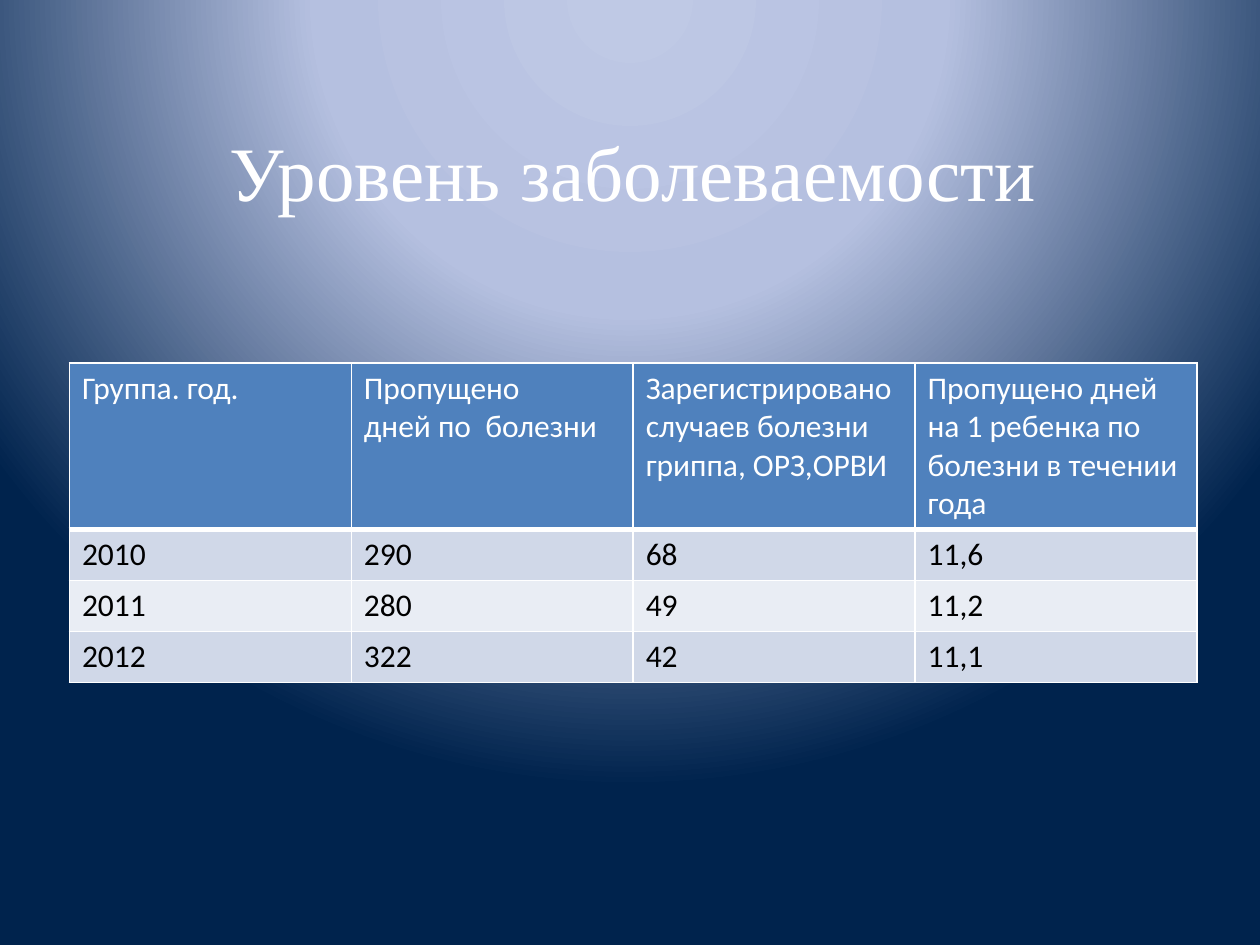
from dataclasses import dataclass

from lxml import etree
from pptx import Presentation
from pptx.dml.color import RGBColor
from pptx.enum import text
from pptx.oxml import ns
from pptx.util import Cm, Pt

TITLE = "Уровень заболеваемости"
HEADER = [
    ["Группа. год."],
    ["Пропущено", "дней по  болезни"],
    ["Зарегистрировано случаев болезни гриппа, ОРЗ,ОРВИ"],
    ["Пропущено дней на 1 ребенка по болезни в течении года"],
]
YEARS = [
    ("2010", "290", "68", "11,6"),
    ("2011", "280", "49", "11,2"),
    ("2012", "322", "42", "11,1"),
]


@dataclass(frozen=True)
class Theme:
    title_font: str = "Times New Roman"
    body_font: str = "Calibri"
    title_size: int = 44
    body_size: int = 18
    light: str = "FFFFFF"
    dark: str = "000000"
    header: str = "4F81BD"
    bands: tuple = ("D0D8E8", "E9EDF4")
    glow: tuple = ((0, "BFC9E5"), (40, "B5C0E0"), (100, "00234D"))
    border: int = 1
    header_border: int = 3


THEME = Theme()
LEFT, WIDTH = 1.4, 22.73
TITLE_TOP, TITLE_HEIGHT = 1.57, 3.76
TABLE_TOP, HEADER_HEIGHT, ROW_HEIGHT = 7.32, 3.35, 1.03


def add(parent, tag, **attrs):
    return etree.SubElement(parent, ns.qn(tag), {k: str(v) for k, v in attrs.items()})


def paint_background(s):
    fill = s.background.fill
    fill.gradient()
    grad = s.element.find(".//" + ns.qn("a:gradFill"))
    for child in list(grad):
        grad.remove(child)
    stops = add(grad, "a:gsLst")
    for pos, color in THEME.glow:
        add(add(stops, "a:gs", pos=pos * 1000), "a:srgbClr", val=color)
    focus = add(grad, "a:path", path="circle")
    add(focus, "a:fillToRect", l=50000, t=-80000, r=50000, b=180000)


def write(tf, lines, font, size, color, align):
    for i, line in enumerate(lines):
        p = tf.add_paragraph() if i else tf.paragraphs[0]
        p.alignment = align
        r = p.add_run()
        r.text = line
        r.font.name = font
        r.font.size = Pt(size)
        r.font.color.rgb = RGBColor.from_string(color)


def add_title(s):
    box = s.shapes.add_textbox(Cm(LEFT), Cm(TITLE_TOP), Cm(WIDTH), Cm(TITLE_HEIGHT))
    tf = box.text_frame
    tf.word_wrap = True
    tf.vertical_anchor = text.MSO_ANCHOR.MIDDLE
    write(tf, [TITLE], THEME.title_font, THEME.title_size, THEME.light,
          text.PP_ALIGN.CENTER)


def style_cell(cell, lines, fill, color, bottom):
    props = cell._tc.get_or_add_tcPr()
    for side in "LRTB":
        width = bottom if side == "B" else THEME.border
        line = add(props, f"a:ln{side}", w=Pt(width))
        add(add(line, "a:solidFill"), "a:srgbClr", val=THEME.light)
    cell.fill.solid()
    cell.fill.fore_color.rgb = RGBColor.from_string(fill)
    write(cell.text_frame, lines, THEME.body_font, THEME.body_size, color,
          text.PP_ALIGN.LEFT)


def add_illness_table(s):
    rows = [HEADER] + [[[value] for value in year] for year in YEARS]
    height = HEADER_HEIGHT + ROW_HEIGHT * len(YEARS)
    table = s.shapes.add_table(len(rows), len(HEADER), Cm(LEFT), Cm(TABLE_TOP),
                               Cm(WIDTH), Cm(height)).table
    table.first_row = True
    for col in table.columns:
        col.width = Cm(WIDTH / len(HEADER))
    for i, row in enumerate(rows):
        table.rows[i].height = Cm(ROW_HEIGHT if i else HEADER_HEIGHT)
        if i:
            look = THEME.bands[(i - 1) % 2], THEME.dark, THEME.border
        else:
            look = THEME.header, THEME.light, THEME.header_border
        for j, lines in enumerate(row):
            style_cell(table.cell(i, j), lines, *look)


def main():
    prs = Presentation()
    prs.slide_width, prs.slide_height = Cm(25.4), Cm(19.05)
    s = prs.slides.add_slide(prs.slide_layouts[6])
    paint_background(s)
    add_title(s)
    add_illness_table(s)
    prs.save("out.pptx")


if __name__ == "__main__":
    main()
